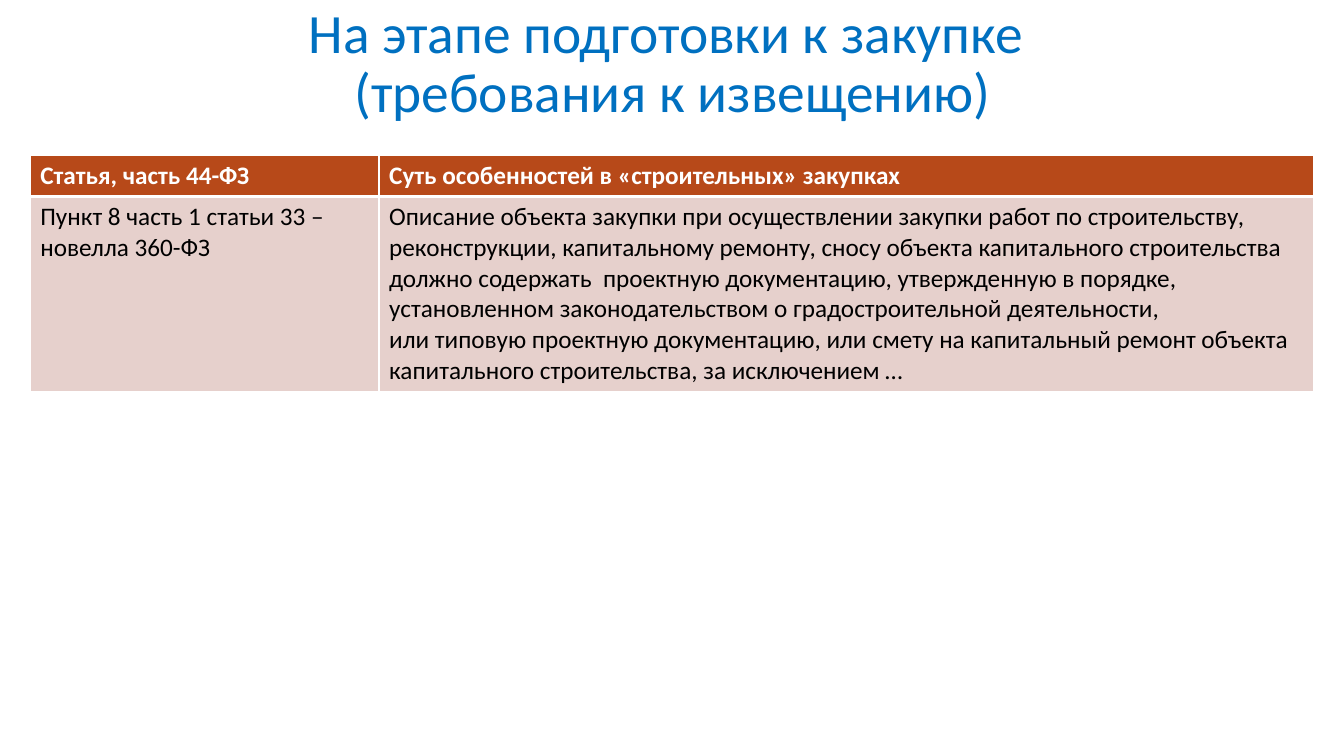
from lxml import etree
from pptx import Presentation
from pptx.dml.color import RGBColor
from pptx.enum.text import MSO_ANCHOR, MSO_AUTO_SIZE, PP_ALIGN
from pptx.oxml.ns import qn
from pptx.util import Inches, Pt

TITLE = "На этапе подготовки к закупке \n(требования к извещению)"
ROWS = [
    [["Статья, часть 44-ФЗ"], ["Суть особенностей в «строительных» закупках"]],
    [
        ["Пункт 8 часть 1 статьи 33 – новелла 360-ФЗ"],
        [
            "Описание объекта закупки при осуществлении закупки работ по строительству, "
            "реконструкции, капитальному ремонту, сносу объекта капитального строительства "
            "должно содержать  проектную документацию, утвержденную в порядке, "
            "установленном законодательством о градостроительной деятельности,",
            "или типовую проектную документацию, или смету на капитальный ремонт объекта "
            "капитального строительства, за исключением …",
        ],
    ],
]
COL_WIDTHS = [3.46, 9.27]
ROW_HEIGHTS = [0.41, 1.9]

BLUE = RGBColor(0x00, 0x70, 0xC0)
RUST = RGBColor(0xB7, 0x49, 0x19)
PINK = RGBColor(0xE6, 0xD0, 0xCC)
WHITE = RGBColor(0xFF, 0xFF, 0xFF)
BLACK = RGBColor(0x00, 0x00, 0x00)

CENTER = PP_ALIGN.CENTER
MIDDLE = MSO_ANCHOR.MIDDLE
NO_FIT = MSO_AUTO_SIZE.NONE

TITLE_FONT = {"name": "Calibri", "size": Pt(39.6), "bold": False}
HEADER_FONT = {"name": "Calibri", "size": Pt(18), "bold": True}
BODY_FONT = {"name": "Calibri", "size": Pt(18), "bold": False}
ROW_STYLES = [
    (RUST, WHITE, HEADER_FONT, {"lnL": 1, "lnR": 1, "lnT": 1, "lnB": 3}),
    (PINK, BLACK, BODY_FONT, {"lnL": 1, "lnR": 1, "lnT": 3, "lnB": 1}),
]


def write(p, text, font, color):
    p.text = text
    for r in p.runs:
        for key, value in font.items():
            setattr(r.font, key, value)
        r.font.color.rgb = color


def add_borders(cell, widths):
    tc_pr = cell._tc.get_or_add_tcPr()
    for side, width in widths.items():
        ln = etree.SubElement(tc_pr, qn(f"a:{side}"), w=str(Pt(width)))
        fill = etree.SubElement(ln, qn("a:solidFill"))
        etree.SubElement(fill, qn("a:srgbClr"), val=str(WHITE))


def add_title(s):
    sp = s.shapes.title
    sp.left, sp.top, sp.width, sp.height = map(Inches, (0.92, 0.4, 11.5, 0.49))
    tf = sp.text_frame
    tf.word_wrap = True
    tf.auto_size = NO_FIT
    tf.vertical_anchor = MIDDLE
    p = tf.paragraphs[0]
    p.alignment = CENTER
    p.line_spacing = 0.9
    write(p, TITLE, TITLE_FONT, BLUE)


def add_requirements(s):
    table = s.shapes.add_table(
        len(ROWS), len(COL_WIDTHS), Inches(0.3), Inches(1.54),
        Inches(sum(COL_WIDTHS)), Inches(sum(ROW_HEIGHTS))).table
    for col, width in zip(table.columns, COL_WIDTHS):
        col.width = Inches(width)
    for row, height, texts, style in zip(table.rows, ROW_HEIGHTS, ROWS, ROW_STYLES):
        row.height = Inches(height)
        fill, color, font, borders = style
        for cell, lines in zip(row.cells, texts):
            add_borders(cell, borders)
            cell.fill.solid()
            cell.fill.fore_color.rgb = fill
            tf = cell.text_frame
            for i, line in enumerate(lines):
                p = tf.add_paragraph() if i else tf.paragraphs[0]
                write(p, line, font, color)


def main():
    prs = Presentation()
    prs.slide_width, prs.slide_height = Inches(13.33), Inches(7.5)
    s = prs.slides.add_slide(prs.slide_layouts[5])
    add_title(s)
    add_requirements(s)
    prs.save("out.pptx")


if __name__ == "__main__":
    main()
